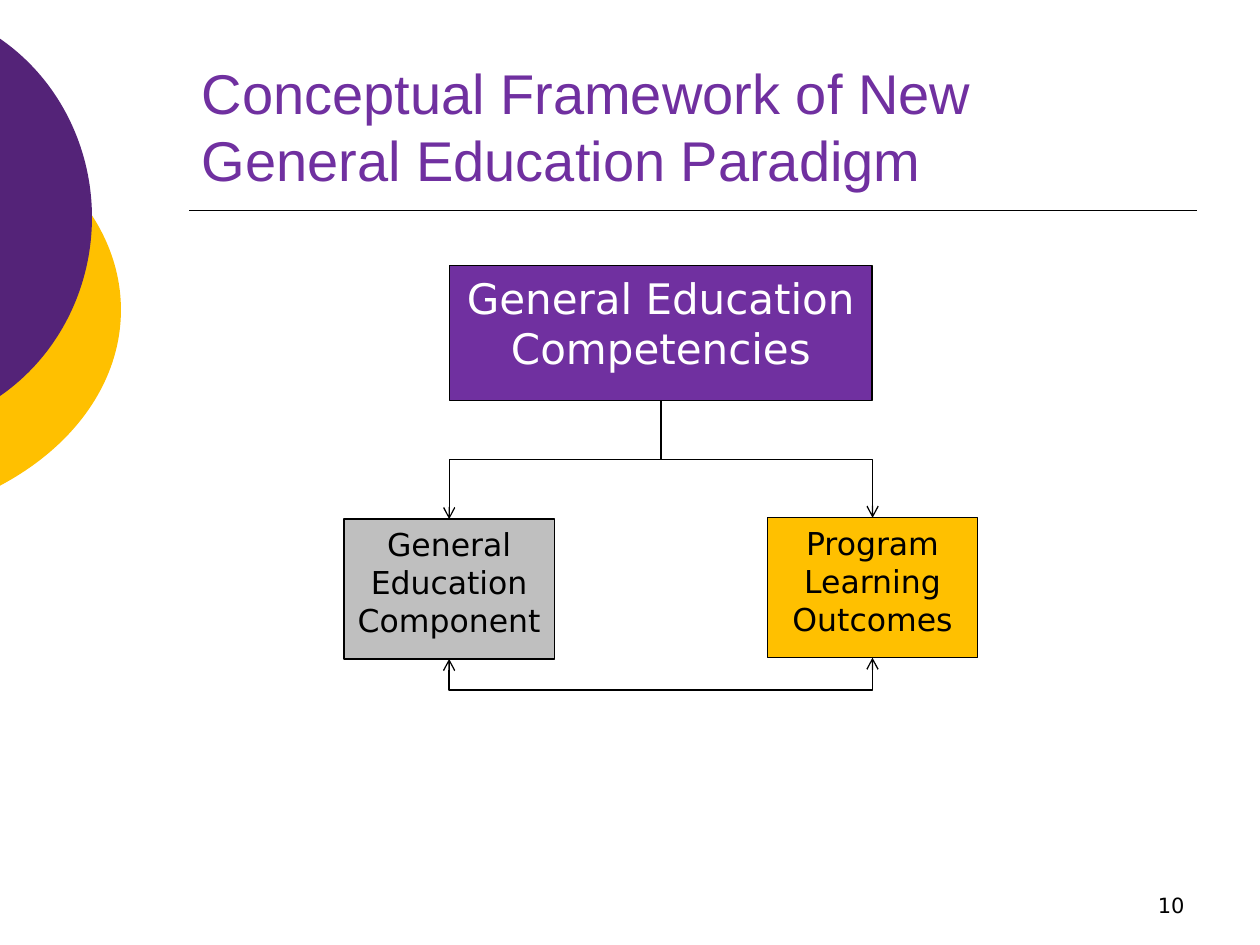
from dataclasses import dataclass

from lxml.etree import SubElement
from pptx import Presentation
from pptx.dml.color import RGBColor
from pptx.enum.shapes import MSO_CONNECTOR, MSO_SHAPE
from pptx.enum.text import MSO_ANCHOR, MSO_AUTO_SIZE, PP_ALIGN
from pptx.oxml.ns import qn
from pptx.util import Inches, Pt


@dataclass(frozen=True)
class Theme:
    """Colours, fonts and type sizes of the slide."""
    black: RGBColor = RGBColor(0, 0, 0)
    white: RGBColor = RGBColor(255, 255, 255)
    purple: RGBColor = RGBColor(0x70, 0x30, 0xA0)
    plum: RGBColor = RGBColor(0x54, 0x23, 0x78)
    gold: RGBColor = RGBColor(0xFF, 0xC0, 0x00)
    grey: RGBColor = RGBColor(0xBF, 0xBF, 0xBF)
    heading_font: str = "Arial"
    body_font: str = "DejaVu Sans"
    title_size: int = 32
    lead_size: int = 24
    box_size: int = 18
    number_size: int = 12


THEME = Theme()


def place(shape, box):
    """Move a shape to a box of left, top, width and height in inches."""
    shape.left, shape.top, shape.width, shape.height = map(Inches, box)


def format_text(frame, font, size, color, align):
    """Format every paragraph and run of a text frame."""
    frame.word_wrap = True
    for paragraph in frame.paragraphs:
        paragraph.alignment = align
        for run in paragraph.runs:
            run.font.name = font
            run.font.size = Pt(size)
            run.font.color.rgb = color


def style_line(connector, width):
    """Give a connector a plain black line without shadow."""
    connector.line.color.rgb = THEME.black
    connector.line.width = Pt(width)
    SubElement(connector._element.spPr, qn("a:effectLst"))


def add_side_disc(slide, box, cut, bulge, color):
    """Draw a disc of which only the part right of the slide edge is filled."""
    left, top, width, height = box
    cut_top, cut_bottom = cut
    reach, drop, rise = bulge
    edge, tip = -0.01, left + width
    middle = (cut_top + cut_bottom) / 2
    curves = (
        ((reach, cut_top + drop), (tip, cut_top + rise), (tip, middle)),
        ((tip, cut_bottom - rise), (reach, cut_bottom - drop), (edge, cut_bottom)),
    )
    builder = slide.shapes.build_freeform(Inches(edge), Inches(cut_top), scale=1.0)
    builder.add_line_segments([(Inches(tip), Inches(middle)),
                               (Inches(edge), Inches(cut_bottom))], close=True)
    disc = builder.convert_to_shape()
    place(disc, box)
    outline = next(disc._element.iter(qn("a:path")))
    outline.set("w", str(Inches(width)))
    outline.set("h", str(Inches(height)))
    for old in list(outline):
        outline.remove(old)
    moves = [("a:moveTo", ((edge, cut_top),))]
    moves += [("a:cubicBezTo", curve) for curve in curves]
    for tag, points in moves:
        move = SubElement(outline, qn(tag))
        for x, y in points:
            SubElement(move, qn("a:pt"), x=str(Inches(x - left)), y=str(Inches(y - top)))
    SubElement(outline, qn("a:close"))
    disc.shadow.inherit = False
    disc.fill.solid()
    disc.fill.fore_color.rgb = color
    disc.line.fill.background()


def add_heading(slide, box):
    """Place the title and the rule below it."""
    left, top, width, height = box
    title = slide.shapes.title
    place(title, box)
    title.text_frame.text = "Conceptual Framework of New General Education Paradigm"
    title.text_frame.auto_size = MSO_AUTO_SIZE.NONE
    title.text_frame.vertical_anchor = MSO_ANCHOR.BOTTOM
    format_text(title.text_frame, THEME.heading_font, THEME.title_size,
                THEME.purple, PP_ALIGN.LEFT)
    rule_y = Inches(top + height + 0.09)
    rule = slide.shapes.add_connector(MSO_CONNECTOR.STRAIGHT, Inches(left), rule_y,
                                      Inches(left + width), rule_y)
    style_line(rule, 1)


def add_box(slide, box, text, size, fill, color):
    """Draw one framework box with centred text."""
    card = slide.shapes.add_shape(MSO_SHAPE.RECTANGLE, *map(Inches, box))
    card.shadow.inherit = False
    card.fill.solid()
    card.fill.fore_color.rgb = fill
    card.line.color.rgb = THEME.black
    card.line.width = Pt(0.75)
    card.text_frame.text = text
    card.text_frame.vertical_anchor = MSO_ANCHOR.TOP
    format_text(card.text_frame, THEME.body_font, size, color, PP_ALIGN.CENTER)


def add_elbow(slide, start, end, turn, flips, bend, arrows):
    """Draw a vertical-first elbow between two points in inches."""
    (x1, y1), (x2, y2) = start, end
    run, span = abs(y2 - y1), abs(x2 - x1)
    elbow = slide.shapes.add_connector(MSO_CONNECTOR.ELBOW, 0, 0, 0, 0)
    place(elbow, ((x1 + x2 - run) / 2, (y1 + y2 - span) / 2, run, span))
    properties = elbow._element.spPr
    frame = properties.find(qn("a:xfrm"))
    frame.set("rot", str(turn * 60000))
    for flip in flips:
        frame.set(flip, "1")
    guides = properties.find(qn("a:prstGeom")).get_or_add_avLst()
    SubElement(guides, qn("a:gd"), name="adj1", fmla=f"val {round(bend * 100000)}")
    style_line(elbow, 0.75)
    outline = elbow.line._get_or_add_ln()
    for arrow in arrows:
        SubElement(outline, qn(f"a:{arrow}"), type="arrow")


def add_framework(slide, box):
    """Lay out the competencies above the two linked boxes."""
    left, top, width, height = box
    lead_width, lead_height = 3.35, 1.07
    card_width, card_height = 1.67, 1.11
    middle = left + width / 2
    grey_top = top + height - card_height
    gold_top = grey_top - 0.01
    gold_left = left + width - card_width
    grey_x, gold_x = left + card_width / 2, gold_left + card_width / 2
    fork = (middle, top + lead_height)

    add_box(slide, (middle - lead_width / 2, top, lead_width, lead_height),
            "General Education\nCompetencies", THEME.lead_size, THEME.purple, THEME.white)
    add_box(slide, (left, grey_top, card_width, card_height),
            "General Education Component", THEME.box_size, THEME.grey, THEME.black)
    add_elbow(slide, fork, (grey_x, grey_top), 90, (), 0.5, ("tailEnd",))
    add_box(slide, (gold_left, gold_top, card_width, card_height),
            "Program\nLearning\nOutcomes", THEME.box_size, THEME.gold, THEME.black)
    add_elbow(slide, fork, (gold_x, gold_top), 270, ("flipH",), 0.5, ("tailEnd",))
    add_elbow(slide, (grey_x, grey_top + card_height), (gold_x, gold_top + card_height),
              90, ("flipH", "flipV"), -25, ("headEnd", "tailEnd"))


def add_page_number(slide, box):
    """Place the page number at the lower right."""
    number = slide.shapes.add_textbox(*map(Inches, box))
    number.text_frame.text = "10"
    number.text_frame.vertical_anchor = MSO_ANCHOR.BOTTOM
    format_text(number.text_frame, THEME.body_font, THEME.number_size,
                THEME.black, PP_ALIGN.RIGHT)


def main():
    """Build the slide and save it."""
    deck = Presentation()
    deck.slide_width, deck.slide_height = Inches(10), Inches(7.5)
    slide = deck.slides.add_slide(deck.slide_layouts[5])
    add_side_disc(slide, (-3.54, 0.75, 4.5, 3.42), (1.06, 3.86), (0.6, 0.32, 0.84), THEME.gold)
    add_side_disc(slide, (-2.65, 0, 3.38, 3.45), (0.3, 3.15), (0.46, 0.32, 0.86), THEME.plum)
    add_heading(slide, (1.5, 0.33, 8, 1.25))
    add_framework(slide, (2.73, 2.11, 5.03, 3.12))
    add_page_number(slide, (7.17, 6.83, 2.33, 0.5))
    deck.save("out.pptx")


if __name__ == "__main__":
    main()
